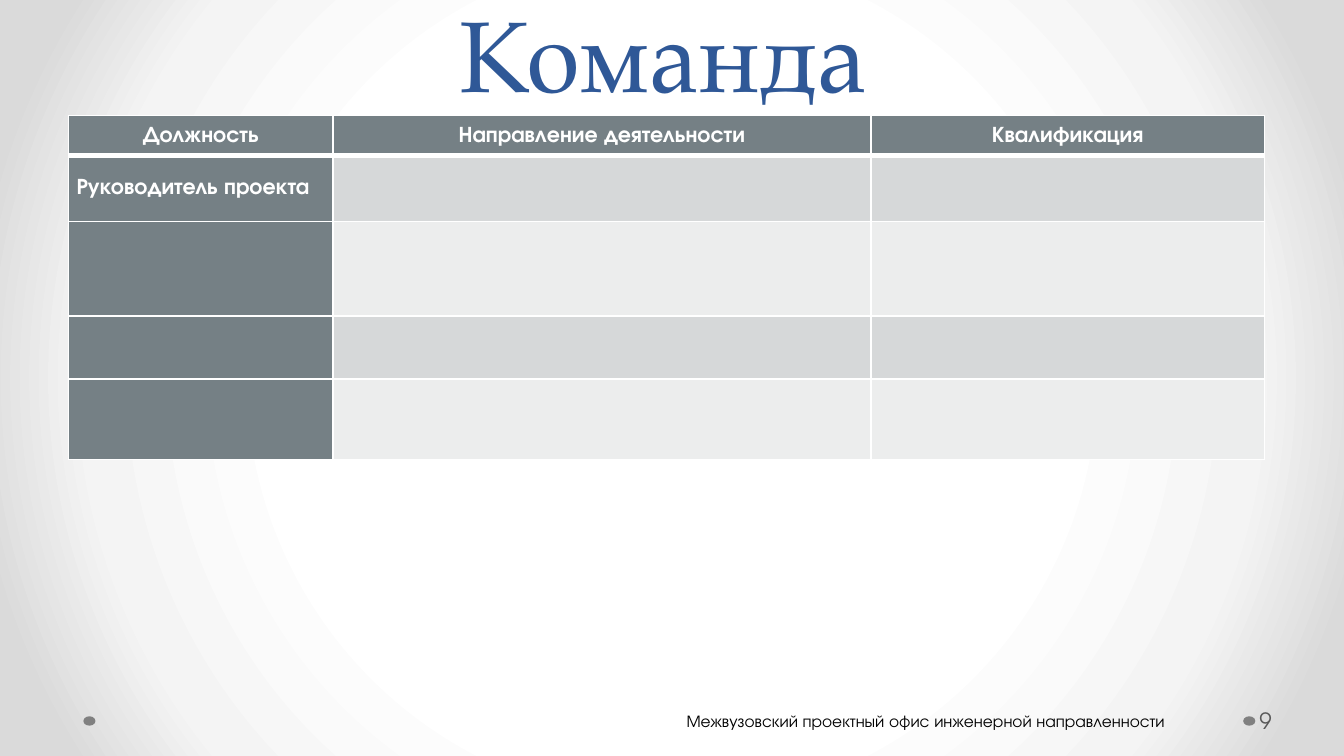
"""Build the team slide: a title, a table of roles and a footer."""
import pptx
import pptx.dml.color
import pptx.enum.shapes
import pptx.enum.text
import pptx.oxml
import pptx.util
from pptx.oxml.ns import nsdecls

WIDTH = 10
HEIGHT = WIDTH * 9 / 16
TITLE = "Команда"
FOOTER = "Межвузовский проектный офис инженерной направленности"
NUMBER = "9"
ROWS = [
    ["Должность", "Направление деятельности", "Квалификация"],
    ["Руководитель проекта", "", ""],
    ["", "", ""],
    ["", "", ""],
    ["", "", ""],
]
COLUMN_WIDTHS = [1.97, 4, 2.93]
ROW_HEIGHTS = [0.3, 0.49, 0.7, 0.47, 0.6]
TABLE_LEFT, TABLE_TOP = 0.51, 0.86
DOT_LEFTS = [0.62, 9.25]
HEADING_FILL, BANDS = "758085", ["ECEDED", "D6D8D9"]
BACKGROUND = [(50, "FFFFFF"), (76, "F4F4F4"), (92, "DADADA")]
SERIF, SANS = "TeX Gyre Pagella", "TeX Gyre Adventor"
ALIGN, ANCHOR = pptx.enum.text.PP_ALIGN, pptx.enum.text.MSO_ANCHOR
AUTO = pptx.enum.text.MSO_AUTO_SIZE


def inches(*values):
    return [pptx.util.Inches(v) for v in values]


def paint(fill, color):
    fill.solid()
    fill.fore_color.rgb = pptx.dml.color.RGBColor.from_string(color)


def write(tf, text, size, color, font=SANS, bold=False, align=ALIGN.LEFT):
    p = tf.paragraphs[0]
    p.text, p.alignment = text, align
    p.font.name, p.font.size, p.font.bold = font, pptx.util.Pt(size), bold
    paint(p.font.fill, color)
    return p


def add_background(slide):
    stops = "".join(
        f'<a:gs pos="{share * 1000}"><a:srgbClr val="{color}"/></a:gs>'
        for share, color in BACKGROUND)
    slide.element.cSld.insert(0, pptx.oxml.parse_xml(
        f'<p:bg {nsdecls("p", "a")}><p:bgPr><a:gradFill rotWithShape="1">'
        f'<a:gsLst>{stops}</a:gsLst><a:path path="circle">'
        '<a:fillToRect l="50000" t="50000" r="50000" b="50000"/></a:path>'
        '</a:gradFill><a:effectLst/></p:bgPr></p:bg>'))


def add_borders(cell, widths):
    for side, width in widths.items():
        cell._tc.get_or_add_tcPr().append(pptx.oxml.parse_xml(
            f'<a:ln{side} {nsdecls("a")} w="{pptx.util.Pt(width)}"><a:solidFill>'
            f'<a:srgbClr val="FFFFFF"/></a:solidFill></a:ln{side}>'))


def add_title(slide):
    s = slide.shapes.title
    s.left, s.top, s.width, s.height = inches(0.43, -0.42, 9, 1.31)
    tf = s.text_frame
    tf.auto_size, tf.vertical_anchor = AUTO.NONE, ANCHOR.BOTTOM
    p = write(tf, TITLE, 54, "2F5897", SERIF, align=ALIGN.CENTER)
    p.line_spacing = pptx.util.Pt(58)


def add_team_table(slide):
    box = inches(TABLE_LEFT, TABLE_TOP, sum(COLUMN_WIDTHS), sum(ROW_HEIGHTS))
    table = slide.shapes.add_table(len(ROWS), len(COLUMN_WIDTHS), *box).table
    for column, width in zip(table.columns, inches(*COLUMN_WIDTHS)):
        column.width = width
    for row, height in zip(table.rows, inches(*ROW_HEIGHTS)):
        row.height = height
    for i, row in enumerate(ROWS):
        for j, text in enumerate(row):
            cell = table.cell(i, j)
            cell.vertical_anchor = ANCHOR.MIDDLE
            cell.margin_left, cell.margin_right = inches(0.06, 0.06)
            cell.margin_top = cell.margin_bottom = 0
            add_borders(cell, {"L": 1, "R": 1, "T": 3 if i == 1 else 1,
                               "B": 3 if i == 0 else 1})
            heading = i == 0 or j == 0
            paint(cell.fill, HEADING_FILL if heading else BANDS[i % 2])
            if text:
                align = ALIGN.JUSTIFY if i else ALIGN.CENTER
                p = write(cell.text_frame, text, 12, "FFFFFF", bold=True, align=align)
                p.line_spacing = 1 if i else 1.07


def add_footer(slide):
    for left in DOT_LEFTS:
        dot = slide.shapes.add_shape(
            pptx.enum.shapes.MSO_SHAPE.OVAL, *inches(left, 5.33, 0.09, 0.07))
        dot.shadow.inherit = False
        paint(dot.fill, "808080")
        dot.line.fill.background()
    tf = slide.shapes.add_textbox(*inches(9.34, 5.21, 0.61, 0.3)).text_frame
    tf.word_wrap, tf.vertical_anchor = True, ANCHOR.MIDDLE
    tf.margin_left, tf.margin_right = inches(0.03, 0.05)
    write(tf, NUMBER, 12, "595959")
    tf = slide.shapes.add_textbox(*inches(5.01, 5.24, 4.18, 0.25)).text_frame
    tf.word_wrap, tf.auto_size = False, AUTO.SHAPE_TO_FIT_TEXT
    write(tf, FOOTER, 9, "000000")


def main():
    prs = pptx.Presentation()
    prs.slide_width, prs.slide_height = inches(WIDTH, HEIGHT)
    slide = prs.slides.add_slide(prs.slide_layouts[5])
    add_background(slide)
    add_title(slide)
    add_team_table(slide)
    add_footer(slide)
    prs.save("out.pptx")


if __name__ == "__main__":
    main()
